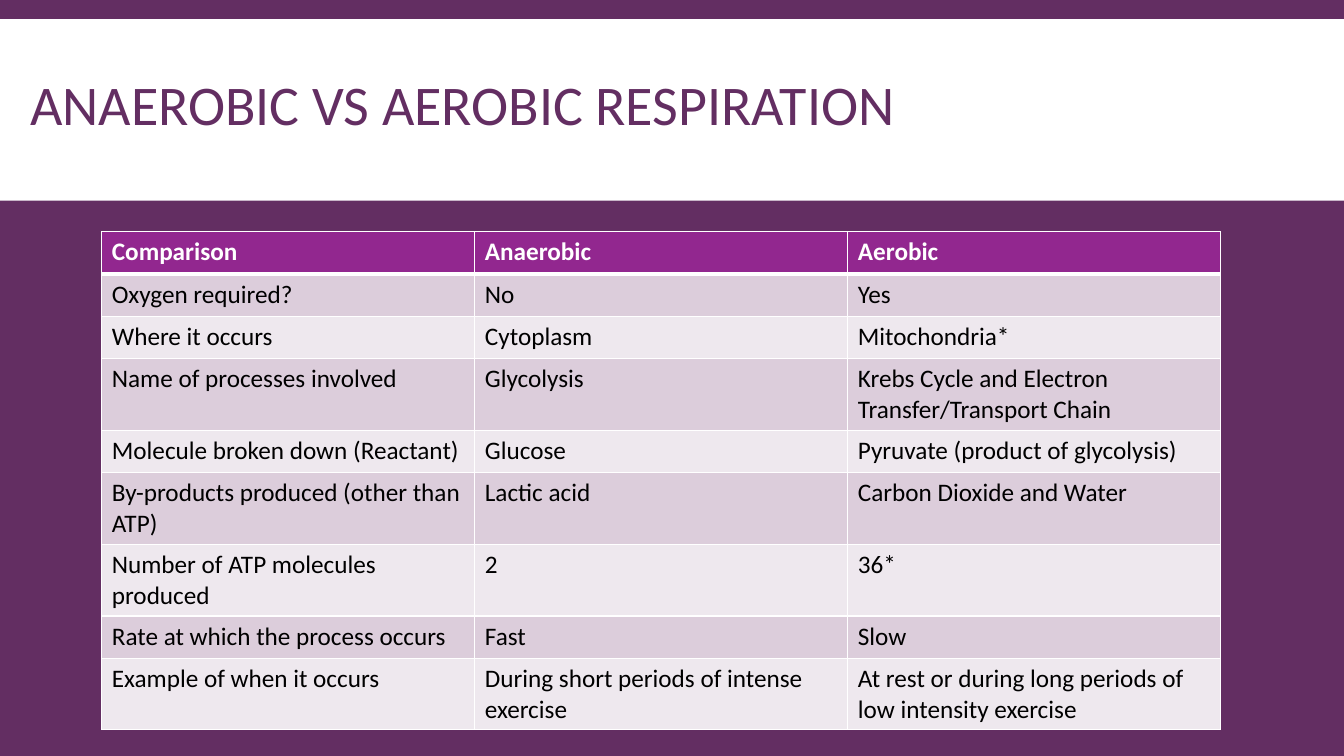
from lxml.etree import SubElement
from pptx import Presentation
from pptx.dml.color import RGBColor
from pptx.enum.shapes import MSO_SHAPE
from pptx.enum.text import MSO_ANCHOR, MSO_AUTO_SIZE, PP_ALIGN
from pptx.oxml import parse_xml
from pptx.oxml.ns import nsdecls, qn
from pptx.util import Inches, Pt

COLORS = {
    "plum": "632E62",
    "header": "92278F",
    "odd_row": "DCCDDB",
    "even_row": "EEE8EE",
    "white": "FFFFFF",
    "black": "000000",
}
FONT = "Calibri"
SLIDE_WIDTH, SLIDE_HEIGHT = 13.33, 7.5
LINE_ROW, WRAPPED_ROW = 0.42, 0.71

# Each row: its height, then its cells
COMPARISON = [
    (LINE_ROW, "Comparison", "Anaerobic", "Aerobic"),
    (LINE_ROW, "Oxygen required?", "No", "Yes"),
    (LINE_ROW, "Where it occurs", "Cytoplasm", "Mitochondria*"),
    (WRAPPED_ROW, "Name of processes involved", "Glycolysis",
     "Krebs Cycle and Electron Transfer/Transport Chain"),
    (LINE_ROW, "Molecule broken down (Reactant)", "Glucose",
     "Pyruvate (product of glycolysis)"),
    (WRAPPED_ROW, "By-products produced (other than ATP)", "Lactic acid",
     "Carbon Dioxide and Water"),
    (WRAPPED_ROW, "Number of ATP molecules produced", "2", "36*"),
    (LINE_ROW, "Rate at which the process occurs", "Fast", "Slow"),
    (WRAPPED_ROW, "Example of when it occurs",
     "During short periods of intense exercise",
     "At rest or during long periods of low intensity exercise"),
]


def color(name):
    return RGBColor.from_string(COLORS[name])


def format_text(para, size, color_name, bold=False):
    for span in para.runs:
        span.font.name = FONT
        span.font.size = Pt(size)
        span.font.bold = bold
        span.font.color.rgb = color(color_name)


def add_title_band(page, left, top, width, height, text):
    """Place a white band with the slide title in front of it."""
    band = page.shapes.add_shape(
        MSO_SHAPE.RECTANGLE, Inches(left), Inches(top), Inches(width), Inches(height))
    band.shadow.inherit = False
    band.fill.solid()
    band.fill.fore_color.rgb = color("white")
    band.line.fill.background()

    title = page.shapes.title
    title.element.addprevious(band.element)
    title.left, title.top = Inches(left + 0.2), Inches(top + 0.07)
    title.width, title.height = Inches(width - 1.78), Inches(height - 0.17)
    frame = title.text_frame
    frame.text = text
    frame.word_wrap = True
    frame.auto_size = MSO_AUTO_SIZE.NONE
    frame.vertical_anchor = MSO_ANCHOR.MIDDLE
    para = frame.paragraphs[0]
    para.alignment = PP_ALIGN.LEFT
    para.line_spacing = 0.85
    format_text(para, 40, "plum")


def set_borders(cell, bottom_width, top_width):
    properties = cell._tc.get_or_add_tcPr()
    widths = {"lnL": 1, "lnR": 1, "lnT": top_width, "lnB": bottom_width}
    for position, (side, width) in enumerate(widths.items()):
        border = parse_xml(f'<a:{side} {nsdecls("a")} w="{Pt(width)}"/>')
        fill = SubElement(border, qn("a:solidFill"))
        SubElement(fill, qn("a:srgbClr"), val=COLORS["white"])
        properties.insert(position, border)


def add_comparison_table(page, left, top, width, rows):
    column_count = len(rows[0]) - 1
    height = sum(row[0] for row in rows)
    table = page.shapes.add_table(
        len(rows), column_count,
        Inches(left), Inches(top), Inches(width), Inches(height)).table
    for column in table.columns:
        column.width = Inches(width / column_count)

    for index, (row_height, *texts) in enumerate(rows):
        table.rows[index].height = Inches(row_height)
        is_header = index == 0
        fill_name = "header" if is_header else "odd_row" if index % 2 else "even_row"
        for column, text in enumerate(texts):
            cell = table.cell(index, column)
            cell.text = text
            cell.fill.solid()
            cell.fill.fore_color.rgb = color(fill_name)
            format_text(cell.text_frame.paragraphs[0], 18,
                        "white" if is_header else "black", is_header)
            set_borders(cell, bottom_width=3 if is_header else 1,
                        top_width=3 if index == 1 else 1)


def main():
    deck = Presentation()
    deck.slide_width, deck.slide_height = Inches(SLIDE_WIDTH), Inches(SLIDE_HEIGHT)
    page = deck.slides.add_slide(deck.slide_layouts.get_by_name("Title Only"))
    page.background.fill.solid()
    page.background.fill.fore_color.rgb = color("plum")
    add_title_band(page, 0, 0.19, SLIDE_WIDTH, 1.8, "ANAEROBIC VS AEROBIC RESPIRATION")
    add_comparison_table(page, 1.01, 2.3, 11.1, COMPARISON)
    deck.save("out.pptx")


if __name__ == "__main__":
    main()
